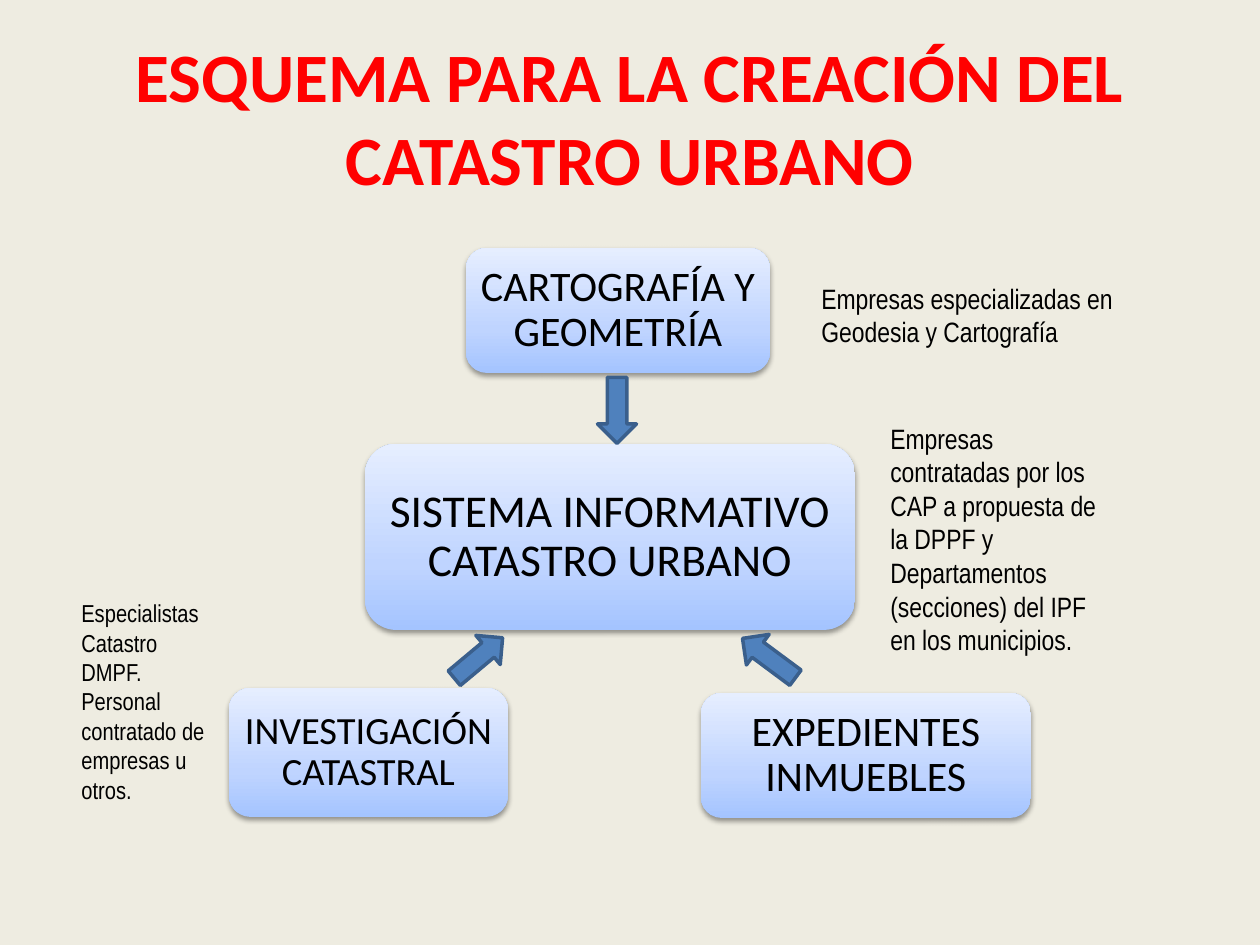
from dataclasses import dataclass

from lxml import etree
from pptx import Presentation
from pptx import util as u
from pptx.dml.color import RGBColor
from pptx.enum import shapes, text
from pptx.oxml.ns import qn

PX = 914400 / 126


def px(*lengths):
    return [u.Emu(round(length * PX)) for length in lengths]


@dataclass(frozen=True)
class Theme:
    background: str = "EEECE1"
    title: str = "FF0000"
    ink: str = "000000"
    arrow: str = "4F81BD"
    arrow_edge: str = "3A5F8C"
    box_stops: tuple = ((0, "A4C4FF"), (35, "BFD4FF"), (100, "E6EEFF"))
    heading_font: str = "Calibri"
    note_font: str = "Arial Narrow"
    title_size: float = 39.6


class Board:
    """Holds the theme and the current slide."""

    def __init__(self, slide, theme):
        self.slide, self.theme = slide, theme
        fill = slide.background.fill
        fill.solid()
        fill.fore_color.rgb = RGBColor.from_string(theme.background)

    def set_text(self, frame, words, align, color, frame_format, **font_format):
        frame.text = words
        for key, value in {"word_wrap": True, **frame_format}.items():
            setattr(frame, key, value)
        paragraph = frame.paragraphs[0]
        paragraph.alignment = align
        font = paragraph.runs[0].font
        for key, value in font_format.items():
            setattr(font, key, value)
        font.color.rgb = RGBColor.from_string(color)
        return paragraph

    def title(self, words, *place):
        holder = self.slide.shapes.title
        holder.left, holder.top, holder.width, holder.height = px(*place)
        self.set_text(holder.text_frame, words, text.PP_ALIGN.CENTER, self.theme.title,
                      {"vertical_anchor": text.MSO_ANCHOR.MIDDLE,
                       "auto_size": text.MSO_AUTO_SIZE.NONE},
                      name=self.theme.heading_font, bold=True,
                      size=u.Pt(self.theme.title_size))

    def box(self, words, size, *place):
        box = self.slide.shapes.add_shape(
            shapes.MSO_SHAPE.ROUNDED_RECTANGLE, *px(*place))
        box.line.fill.background()
        self.shade(box)
        self.drop_shadow(box)
        inset, = px(8)
        margins = {f"margin_{side}": inset for side in ("left", "right", "top", "bottom")}
        paragraph = self.set_text(box.text_frame, words, text.PP_ALIGN.CENTER, self.theme.ink,
                                  {"vertical_anchor": text.MSO_ANCHOR.MIDDLE, **margins},
                                  name=self.theme.heading_font, size=u.Pt(size))
        paragraph.line_spacing = 0.9

    def shade(self, box):
        box.fill.gradient()
        box.fill.gradient_angle = 90
        stops = box.element.spPr.find(f"{qn('a:gradFill')}/{qn('a:gsLst')}")
        for stop in list(stops):
            stops.remove(stop)
        for percent, color in self.theme.box_stops:
            stop = etree.SubElement(stops, qn("a:gs"), pos=str(percent * 1000))
            etree.SubElement(stop, qn("a:srgbClr"), val=color)

    def drop_shadow(self, box):
        box.shadow.inherit = False
        effects = box.element.spPr.find(qn("a:effectLst"))
        shadow = etree.SubElement(effects, qn("a:outerShdw"), blurRad="40000",
                                  dist="20000", dir="5400000", rotWithShape="0")
        color = etree.SubElement(shadow, qn("a:srgbClr"), val=self.theme.ink)
        etree.SubElement(color, qn("a:alpha"), val="38000")

    def arrow(self, rotation, *place):
        arrow = self.slide.shapes.add_shape(shapes.MSO_SHAPE.RIGHT_ARROW, *px(*place))
        arrow.rotation = rotation
        arrow.shadow.inherit = False
        arrow.fill.solid()
        arrow.fill.fore_color.rgb = RGBColor.from_string(self.theme.arrow)
        arrow.line.color.rgb = RGBColor.from_string(self.theme.arrow_edge)
        arrow.line.width = u.Pt(2)

    def note(self, words, size, *place):
        note = self.slide.shapes.add_textbox(*px(*place))
        self.set_text(note.text_frame, words, text.PP_ALIGN.LEFT, self.theme.ink,
                      {"auto_size": text.MSO_AUTO_SIZE.SHAPE_TO_FIT_TEXT},
                      name=self.theme.note_font, size=u.Pt(size))


def main():
    deck = Presentation()
    deck.slide_width, deck.slide_height = px(1260, 945)
    board = Board(deck.slides.add_slide(deck.slide_layouts[5]), Theme())

    board.title("ESQUEMA PARA LA CREACIÓN DEL CATASTRO URBANO", 63, 38, 1134, 157)

    # Central system and its three sources
    board.box("SISTEMA INFORMATIVO CATASTRO URBANO", 26, 365, 444, 490, 186)
    board.box("CARTOGRAFÍA Y GEOMETRÍA", 24, 466, 248, 304, 125)
    board.box("EXPEDIENTES INMUEBLES", 24, 701, 693, 330, 125)
    board.box("INVESTIGACIÓN CATASTRAL", 22, 229, 688, 279, 129)

    # Block arrows from each source to the system
    board.arrow(320.1, 447, 639, 63, 38)
    board.arrow(216.6, 736, 639, 66, 38)
    board.arrow(90, 584, 391, 66, 39)

    # Who carries out each part
    board.note("Empresas especializadas en Geodesia y Cartografía",
               16, 809, 275, 320, 81)
    board.note("Especialistas Catastro DMPF. Personal contratado de empresas u otros.",
               14, 69, 592, 149, 221)
    board.note("Empresas contratadas por los CAP a propuesta de la DPPF y "
               "Departamentos (secciones) del IPF en los municipios.",
               16, 878, 415, 251, 251)

    deck.save("out.pptx")


if __name__ == "__main__":
    main()
